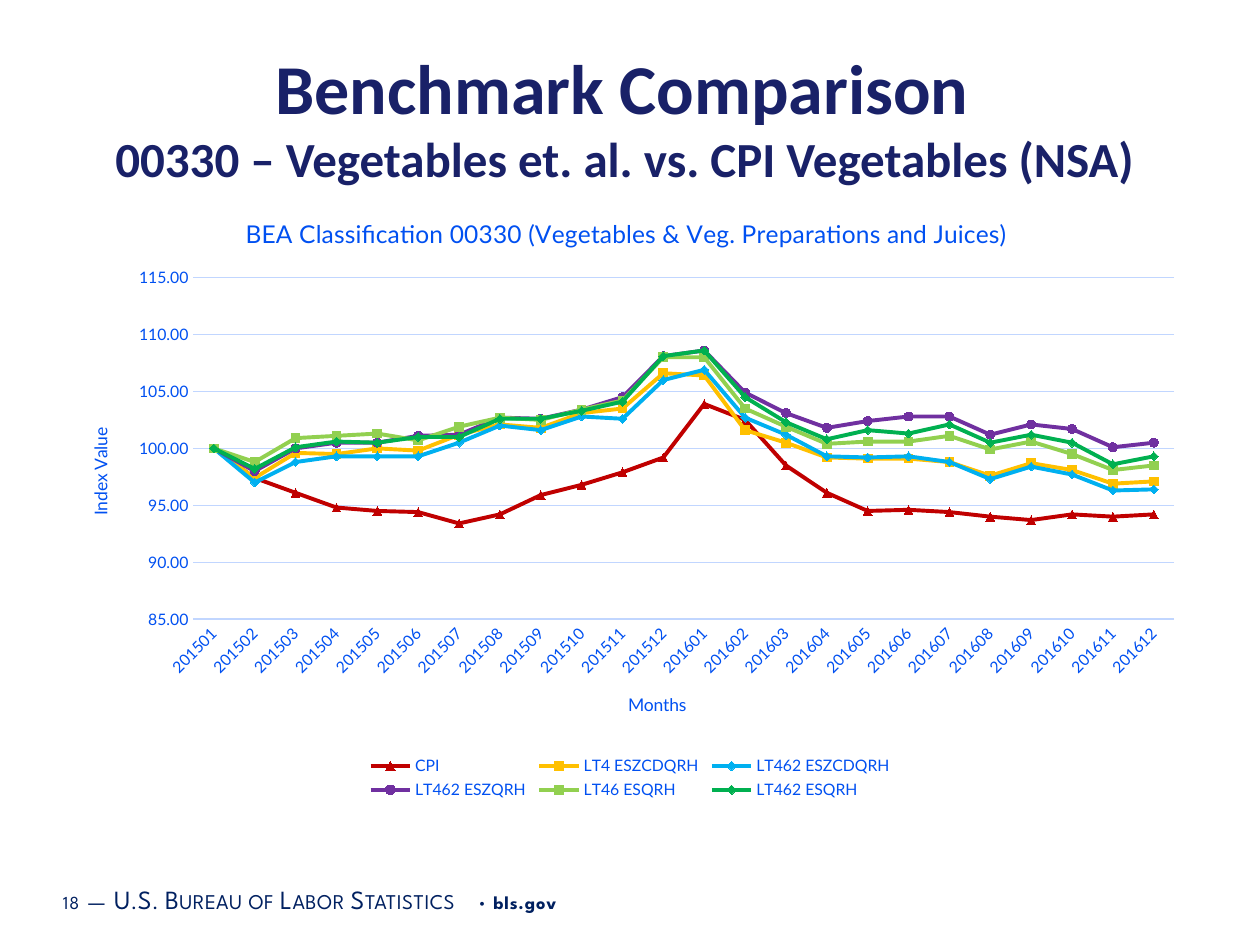
import dataclasses
import typing

import lxml.etree
import pptx
import pptx.chart.data
import pptx.dml.color
import pptx.enum.chart
import pptx.enum.text
import pptx.oxml
import pptx.oxml.ns
import pptx.util

Cm = pptx.util.Cm
Pt = pptx.util.Pt
qn = pptx.oxml.ns.qn
Marks = pptx.enum.chart.XL_MARKER_STYLE


@dataclasses.dataclass(frozen=True)
class Theme:
    title: str = "192168"
    foot: str = "002060"
    label: str = "0050F1"
    grid: str = "C1D6FF"
    head: str = "Calibri"
    plot: str = "Lato"
    base: str = "League Spartan"
    big: float = 40
    mid: float = 28
    chart: float = 14
    axis: float = 10
    tick: float = 9
    note: float = 10.5
    name: float = 15
    gap: float = 16


@dataclasses.dataclass(frozen=True)
class Line:
    name: str
    hue: str
    mark: Marks
    vals: tuple[float, ...]


@dataclasses.dataclass(frozen=True)
class Piece:
    text: str
    size: float
    space: int = 50
    caps: bool = False
    bold: bool = False


THEME = Theme()
MONTHS = [f"{year}{month:02}" for year in (2015, 2016) for month in range(1, 13)]
LINES = (
    Line("CPI", "C00000", Marks.TRIANGLE,
         (100, 97.4, 96.1, 94.8, 94.5, 94.4, 93.4, 94.2, 95.9, 96.8, 97.9, 99.2,
          103.9, 102.5, 98.5, 96.1, 94.5, 94.6, 94.4, 94, 93.7, 94.2, 94, 94.2)),
    Line("LT4 ESZCDQRH", "FFC000", Marks.SQUARE,
         (100, 97.4, 99.6, 99.5, 100, 99.8, 101.2, 102.1, 101.8, 103.1, 103.5, 106.6,
          106.4, 101.6, 100.5, 99.2, 99.1, 99.1, 98.8, 97.6, 98.7, 98.1, 96.9, 97.1)),
    Line("LT462 ESZCDQRH", "00B0F0", Marks.DIAMOND,
         (100, 97, 98.8, 99.3, 99.3, 99.3, 100.5, 102, 101.6, 102.8, 102.6, 106,
          106.9, 102.7, 101.2, 99.3, 99.2, 99.3, 98.8, 97.3, 98.4, 97.7, 96.3, 96.4)),
    Line("LT462 ESZQRH", "7030A0", Marks.CIRCLE,
         (100, 98, 100, 100.5, 100.5, 101.1, 101.2, 102.7, 102.6, 103.4, 104.5, 108.1,
          108.6, 104.9, 103.1, 101.8, 102.4, 102.8, 102.8, 101.2, 102.1, 101.7, 100.1, 100.5)),
    Line("LT46 ESQRH", "92D050", Marks.SQUARE,
         (100, 98.8, 100.9, 101.1, 101.3, 100.7, 101.9, 102.7, 102.5, 103.4, 104.2, 108,
          108, 103.5, 101.9, 100.4, 100.6, 100.6, 101.1, 99.9, 100.6, 99.5, 98.1, 98.5)),
    Line("LT462 ESQRH", "00B050", Marks.DIAMOND,
         (100, 98.2, 100.1, 100.6, 100.5, 101, 101, 102.6, 102.6, 103.3, 104.1, 108.1,
          108.6, 104.5, 102.3, 100.8, 101.6, 101.3, 102.1, 100.5, 101.2, 100.5, 98.6, 99.3)),
)
FOOT = (
    Piece("18", THEME.note),
    Piece(" ", THEME.gap),
    Piece("—", THEME.name, 30, True),
    Piece(" ", THEME.gap),
    Piece("U.S. Bureau of Labor Statistics", THEME.name, 30, True),
    Piece(" • ", THEME.note),
    Piece("bls.gov", THEME.note, bold=True),
)


def put(thing: typing.Any, form: dict[str, typing.Any]) -> None:
    for key, value in form.items():
        setattr(thing, key, value)


def hue(code: str) -> pptx.dml.color.RGBColor:
    return pptx.dml.color.RGBColor.from_string(code)


def style(font: typing.Any, face: str, size: float, code: str, bold: bool = False) -> None:
    put(font, {"name": face, "size": Pt(size), "bold": bold})
    font.color.rgb = hue(code)


def stroke(line: typing.Any, code: str, width: float) -> None:
    line.color.rgb = hue(code)
    line.width = Pt(width)


def place(node: typing.Any, spot: int, **sides: float) -> None:
    for old in node.findall(qn("c:layout")):
        node.remove(old)
    frame = lxml.etree.Element(qn("c:layout"))
    hand = lxml.etree.SubElement(frame, qn("c:manualLayout"))
    if spot == 0:
        lxml.etree.SubElement(hand, qn("c:layoutTarget")).set("val", "inner")
    for side in "xy":
        lxml.etree.SubElement(hand, qn(f"c:{side}Mode")).set("val", "edge")
    for side, percent in sides.items():
        lxml.etree.SubElement(hand, qn(f"c:{side}")).set("val", f"{percent / 100:.4f}")
    node.insert(spot, frame)


def label(title: typing.Any, text: str, size: float, x: float, y: float) -> None:
    title.text_frame.text = text
    style(title.text_frame.paragraphs[0].runs[0].font, THEME.plot, size, THEME.label)
    place(title._element, 1, x=x, y=y)


def draw_title(slide: typing.Any) -> None:
    box = slide.shapes.add_textbox(Cm(1.27), Cm(0.78), Cm(22.86), Cm(3.12))
    put(box.text_frame, {"word_wrap": True,
                         "vertical_anchor": pptx.enum.text.MSO_ANCHOR.MIDDLE})
    para = box.text_frame.paragraphs[0]
    para.alignment = pptx.enum.text.PP_ALIGN.CENTER
    top = para.add_run()
    top.text = "Benchmark Comparison "
    para.add_line_break()
    low = para.add_run()
    low.text = "00330 – Vegetables et. al. vs. CPI Vegetables (NSA) "
    for run, size in ((top, THEME.big), (low, THEME.mid)):
        style(run.font, THEME.head, size, THEME.title, True)


def draw_foot(slide: typing.Any) -> None:
    box = slide.shapes.add_textbox(Cm(1.09), Cm(17.6), Cm(16.08), Cm(1.02))
    put(box.text_frame, {"word_wrap": True, "margin_left": Cm(0.18), "margin_right": Cm(0.18),
                         "margin_top": Cm(0.1), "margin_bottom": Cm(0.1),
                         "vertical_anchor": pptx.enum.text.MSO_ANCHOR.MIDDLE})
    para = box.text_frame.paragraphs[0]
    for piece in FOOT:
        run = para.add_run()
        run.text = piece.text
        style(run.font, THEME.base, piece.size, THEME.foot, piece.bold)
        props = run._r.get_or_add_rPr()
        props.set("spc", str(piece.space))
        if piece.caps:
            props.set("cap", "small")


def draw_chart(slide: typing.Any) -> None:
    data = pptx.chart.data.CategoryChartData(number_format="0.00")
    data.categories = MONTHS
    for line in LINES:
        data.add_series(line.name, line.vals)
    chart = slide.shapes.add_chart(
        pptx.enum.chart.XL_CHART_TYPE.LINE_MARKERS,
        Cm(1.27), Cm(3.91), Cm(22.86), Cm(12.32), data).chart
    style(chart.font, THEME.plot, THEME.axis, THEME.foot)
    label(chart.chart_title, "BEA Classification 00330 (Vegetables & Veg. Preparations and Juices)",
          THEME.chart, 15.7, 2.85)

    months, values = chart.category_axis, chart.value_axis
    label(months.axis_title, "Months", THEME.axis, 49.55, 81)
    label(values.axis_title, "Index Value", THEME.axis, 1.95, 37.7)
    for axis in (months, values):
        put(axis, {"major_tick_mark": pptx.enum.chart.XL_TICK_MARK.NONE,
                   "minor_tick_mark": pptx.enum.chart.XL_TICK_MARK.NONE})
        style(axis.tick_labels.font, THEME.plot, THEME.tick, THEME.label)
    months._element.txPr.bodyPr.set("rot", "-2700000")
    stroke(months.format.line, THEME.grid, 0.75)
    put(values, {"minimum_scale": 85, "maximum_scale": 115, "major_unit": 5,
                 "has_major_gridlines": True})
    put(values.tick_labels, {"number_format": "0.00", "number_format_is_linked": False})
    values.format.line.fill.background()
    stroke(values.major_gridlines.format.line, THEME.grid, 0.75)

    chart.has_legend = True
    put(chart.legend, {"position": pptx.enum.chart.XL_LEGEND_POSITION.BOTTOM,
                       "include_in_layout": False})
    style(chart.legend.font, THEME.plot, THEME.tick, THEME.label)
    place(chart.legend._element, 1, x=26.4, y=91.3, w=47.2, h=8.5)
    place(chart._chartSpace.chart.plotArea, 0, x=11.5, y=13.7, w=86.5, h=55.9)

    chart.plots[0].vary_by_categories = False
    for line, row in zip(LINES, chart.plots[0].series):
        row.smooth = False
        stroke(row.format.line, line.hue, 2.25)
        put(row.marker, {"style": line.mark, "size": 5})
        row.marker.format.fill.solid()
        row.marker.format.fill.fore_color.rgb = hue(line.hue)
        stroke(row.marker.format.line, line.hue, 0.75)


def main() -> None:
    deck = pptx.Presentation()
    put(deck, {"slide_width": Cm(25.4), "slide_height": Cm(19.05)})
    slide = deck.slides.add_slide(deck.slide_layouts[6])
    draw_foot(slide)
    draw_chart(slide)
    draw_title(slide)
    deck.save("out.pptx")


if __name__ == "__main__":
    main()
